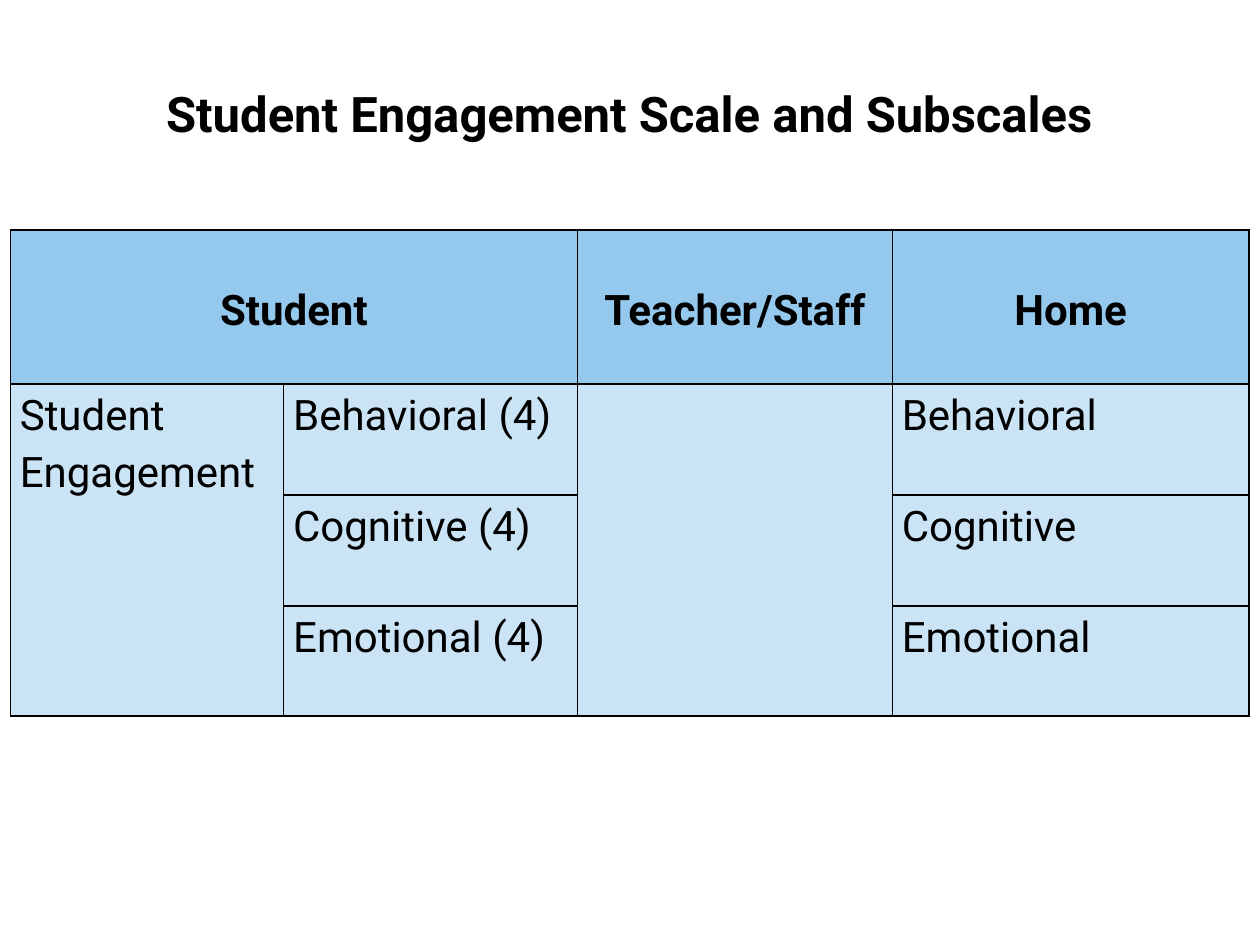
from lxml.etree import SubElement
from pptx import Presentation
from pptx.dml.color import RGBColor
from pptx.enum.text import MSO_ANCHOR, MSO_AUTO_SIZE, PP_ALIGN
from pptx.oxml.ns import qn
from pptx.util import Cm, Pt

HEADING = "Student Engagement Scale and Subscales"
SCALES = [
    ["Student", "", "Teacher/Staff", "Home"],
    ["Student Engagement", "Behavioral (4)", "", "Behavioral"],
    ["", "Cognitive (4)", "", "Cognitive"],
    ["", "Emotional (4)", "", "Emotional"],
]
MERGES = [((0, 0), (0, 1)), ((1, 0), (3, 0)), ((1, 2), (3, 2))]
COLUMN_WIDTHS = [5.51, 5.92, 6.35, 7.19]
ROW_HEIGHTS = [3.1, 2.24, 2.24, 2.21]

BLACK = RGBColor(0x00, 0x00, 0x00)
HEADER_BLUE = RGBColor(0x94, 0xC8, 0xED)
BODY_BLUE = RGBColor(0xCA, 0xE4, 0xF6)

TITLE_FONT = {"name": "Roboto", "size": Pt(28), "bold": True}
HEADER_FONT = {"name": "Roboto", "size": Pt(24), "bold": True}
BODY_FONT = {**HEADER_FONT, "bold": False}
CENTERED = {"alignment": PP_ALIGN.CENTER, "line_spacing": 1.15, "space_after": Pt(10)}
LEFT = {"alignment": PP_ALIGN.LEFT, "line_spacing": 1.15}
HEADER_CELL = {"vertical_anchor": MSO_ANCHOR.MIDDLE, "margin_left": Cm(0.08),
               "margin_right": Cm(0.08), "margin_top": Cm(0.03), "margin_bottom": 0}
BODY_CELL = {"vertical_anchor": MSO_ANCHOR.TOP, "margin_left": Cm(0.19),
             "margin_right": Cm(0.19), "margin_top": 0, "margin_bottom": 0}


def apply(target, values):
    for key, value in values.items():
        setattr(target, key, value)


def write(frame, words, paragraph_format, font_format):
    paragraph = frame.paragraphs[0]
    apply(paragraph, paragraph_format)
    if words:
        run = paragraph.add_run()
        run.text = words
        apply(run.font, font_format)
        run.font.color.rgb = BLACK


def add_borders(cell):
    properties = cell._tc.get_or_add_tcPr()
    for position, side in enumerate(("lnL", "lnR", "lnT", "lnB")):
        line = SubElement(properties, qn(f"a:{side}"), w=str(Pt(1)))
        fill = SubElement(line, qn("a:solidFill"))
        SubElement(fill, qn("a:srgbClr"), val=str(BLACK))
        properties.insert(position, line)


def add_heading(slide):
    heading = slide.shapes.title
    apply(heading, {"left": Cm(2.36), "top": Cm(1.37), "width": Cm(20.65), "height": Cm(1.57)})
    apply(heading.text_frame, {"word_wrap": False, "vertical_anchor": MSO_ANCHOR.TOP,
                               "auto_size": MSO_AUTO_SIZE.SHAPE_TO_FIT_TEXT})
    write(heading.text_frame, HEADING, {**CENTERED, "space_before": 0}, TITLE_FONT)


def add_scales(slide):
    scales = slide.shapes.add_table(
        len(SCALES), len(COLUMN_WIDTHS), Cm(0.21), Cm(4.64),
        Cm(sum(COLUMN_WIDTHS)), Cm(sum(ROW_HEIGHTS))).table
    for column, width in zip(scales.columns, COLUMN_WIDTHS):
        column.width = Cm(width)
    for row, height in zip(scales.rows, ROW_HEIGHTS):
        row.height = Cm(height)
    for r, labels in enumerate(SCALES):
        cell_format, paragraph_format, font_format, color = (
            (BODY_CELL, LEFT, BODY_FONT, BODY_BLUE) if r
            else (HEADER_CELL, CENTERED, HEADER_FONT, HEADER_BLUE))
        for c, label in enumerate(labels):
            cell = scales.cell(r, c)
            apply(cell, cell_format)
            write(cell.text_frame, label, paragraph_format, font_format)
            cell.fill.solid()
            cell.fill.fore_color.rgb = color
            add_borders(cell)
    for first, last in MERGES:
        scales.cell(*first).merge(scales.cell(*last))


def main():
    deck = Presentation()
    apply(deck, {"slide_width": Cm(25.4), "slide_height": Cm(19.05)})
    slide = deck.slides.add_slide(deck.slide_layouts[5])
    add_heading(slide)
    add_scales(slide)
    deck.save("out.pptx")


if __name__ == "__main__":
    main()
